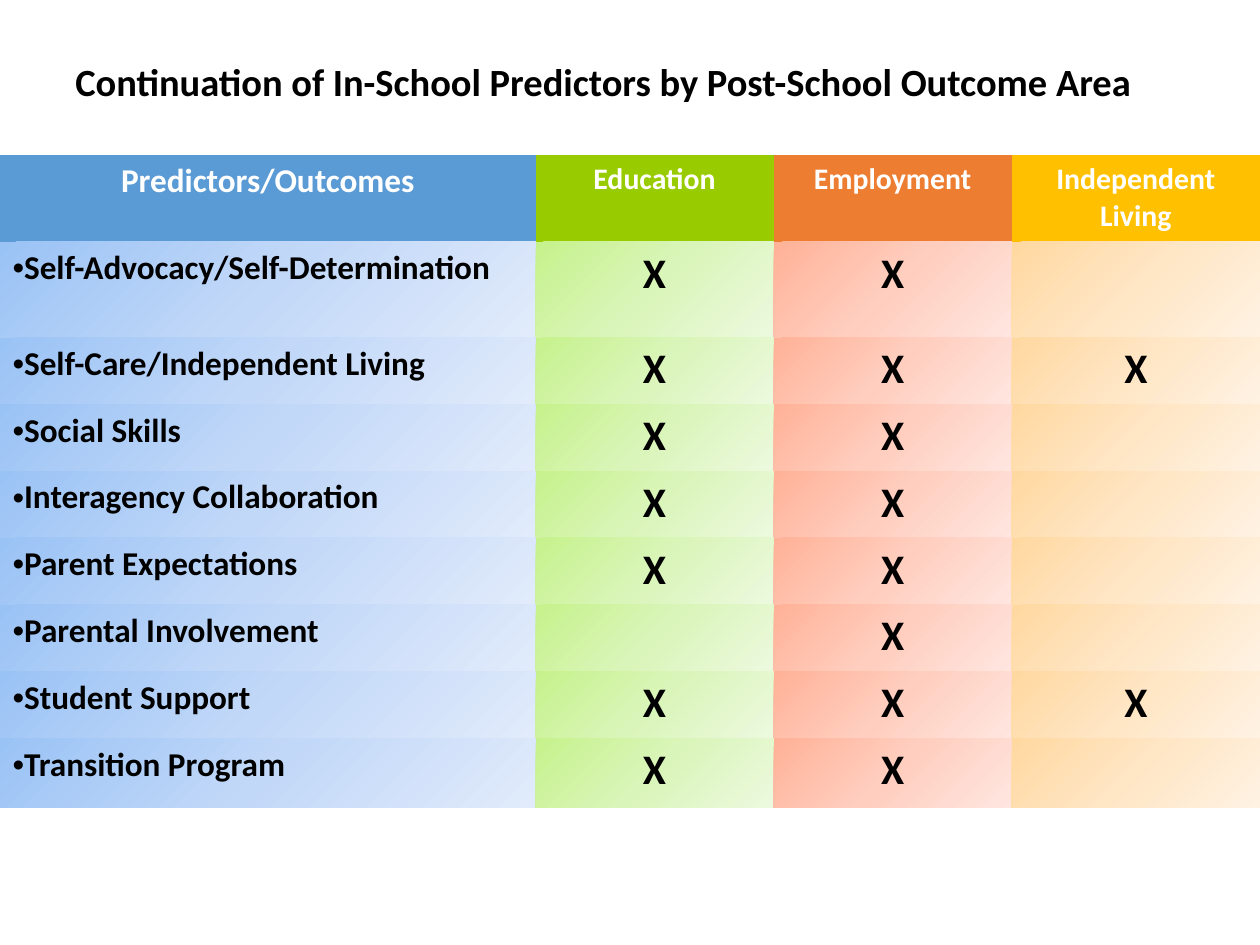
from dataclasses import dataclass

from pptx import Presentation
from pptx.dml.color import RGBColor
from pptx.enum import text
from pptx.oxml import parse_xml
from pptx.oxml.ns import nsdecls, qn
from pptx.util import Inches, Pt


@dataclass(frozen=True)
class Theme:
    font: str = "Calibri"
    ink: str = "000000"
    paper: str = "FFFFFF"
    title_size: int = 22
    label_size: int = 19
    header_size: int = 17
    mark_size: int = 24
    plain_table: str = "{2D5ABB26-0587-4C30-8999-92F81FD0307C}"


@dataclass(frozen=True)
class Column:
    heading: str
    width: float
    size: int
    color: str
    stops: tuple[str, str, str]


@dataclass(frozen=True)
class Predictor:
    label: str
    outcomes: tuple[str, ...]
    height: float = 0.53


THEME = Theme()
COLUMNS = [
    Column("Predictors/Outcomes", 4.25, THEME.label_size, "5B9BD5", ("9AC3F5", "C2D8F8", "E1EBFB")),
    Column("Education", 1.89, THEME.header_size, "99CC00", ("C6F28C", "DAF5BA", "ECF9DE")),
    Column("Employment", 1.89, THEME.header_size, "ED7D31", ("FFB297", "FFCEBF", "FFE6E0")),
    Column("Independent Living", 1.97, THEME.header_size, "FFC000", ("FFD8A0", "FFE6C5", "FFF2E3")),
]
BOTH = ("Education", "Employment")
ALL = BOTH + ("Independent Living",)
PREDICTORS = [
    Predictor("Self-Advocacy/Self-Determination", BOTH, 0.76),
    Predictor("Self-Care/Independent Living", ALL),
    Predictor("Social Skills", BOTH),
    Predictor("Interagency Collaboration", BOTH),
    Predictor("Parent Expectations", BOTH),
    Predictor("Parental Involvement", ("Employment",)),
    Predictor("Student Support", ALL),
    Predictor("Transition Program", BOTH, 0.55),
]
HEADER_HEIGHT, FOOTER_HEIGHT = 0.69, 1.09


def write(p, words: str, size: int, color: str, align=text.PP_ALIGN.LEFT) -> None:
    p.alignment = align
    r = p.add_run()
    r.text = words
    for name, value in {"name": THEME.font, "size": Pt(size), "bold": True}.items():
        setattr(r.font, name, value)
    r.font.color.rgb = RGBColor.from_string(color)


def add_bullet(p) -> None:
    pPr = p._p.get_or_add_pPr()
    pPr.set("marL", "0")
    pPr.set("indent", "0")
    pPr.append(parse_xml(f'<a:buFont {nsdecls("a")} typeface="Arial"/>'))
    pPr.append(parse_xml(f'<a:buChar {nsdecls("a")} char="•"/>'))


def fill_solid(cell, color: str) -> None:
    cell.fill.solid()
    cell.fill.fore_color.rgb = RGBColor.from_string(color)


def fill_gradient(cell, colors: tuple[str, str, str]) -> None:
    """Shade a cell from its top left to its bottom right corner."""
    stops = "".join(
        f'<a:gs pos="{i * 50000}"><a:srgbClr val="{color}"/></a:gs>'
        for i, color in enumerate(colors)
    )
    cell._tc.get_or_add_tcPr().append(parse_xml(
        f'<a:gradFill {nsdecls("a")} rotWithShape="1"><a:gsLst>{stops}</a:gsLst>'
        '<a:lin ang="2700000" scaled="0"/></a:gradFill>'
    ))


def add_title(s, words: str) -> None:
    sp = s.shapes.add_textbox(Inches(0.5), Inches(0.25), Inches(9), Inches(0.83))
    tf = sp.text_frame
    tf.word_wrap = True
    tf.vertical_anchor = text.MSO_ANCHOR.MIDDLE
    p = tf.paragraphs[0]
    p.line_spacing = 0.9
    write(p, words, THEME.title_size, THEME.ink)


def add_predictor_row(table, row: int, predictor: Predictor) -> None:
    for i, column in enumerate(COLUMNS):
        cell = table.cell(row, i)
        fill_gradient(cell, column.stops)
        p = cell.text_frame.paragraphs[0]
        if i == 0:
            write(p, predictor.label, THEME.label_size, THEME.ink)
            add_bullet(p)
        elif column.heading in predictor.outcomes:
            write(p, "X", THEME.mark_size, THEME.ink, text.PP_ALIGN.CENTER)


def add_outcome_table(s) -> None:
    heights = [HEADER_HEIGHT, *(p.height for p in PREDICTORS), FOOTER_HEIGHT]
    frame = s.shapes.add_table(
        len(heights), len(COLUMNS), 0, Inches(1.23), Inches(10), Inches(sum(heights))
    )
    table = frame.table
    table._tbl.tblPr.find(qn("a:tableStyleId")).text = THEME.plain_table
    for row, height in zip(table.rows, heights):
        row.height = Inches(height)
    for i, column in enumerate(COLUMNS):
        table.columns[i].width = Inches(column.width)
        cell = table.cell(0, i)
        fill_solid(cell, column.color)
        write(cell.text_frame.paragraphs[0], column.heading, column.size,
              THEME.paper, text.PP_ALIGN.CENTER)
    for row, predictor in enumerate(PREDICTORS, start=1):
        add_predictor_row(table, row, predictor)
    last = len(heights) - 1
    footer = table.cell(last, 0)
    footer.merge(table.cell(last, len(COLUMNS) - 1))
    fill_solid(footer, THEME.paper)


def main() -> None:
    prs = Presentation()
    prs.slide_width, prs.slide_height = Inches(10), Inches(7.5)
    s = prs.slides.add_slide(prs.slide_layouts[6])
    add_title(s, "Continuation of In-School Predictors by Post-School Outcome Area")
    add_outcome_table(s)
    prs.save("out.pptx")


if __name__ == "__main__":
    main()
